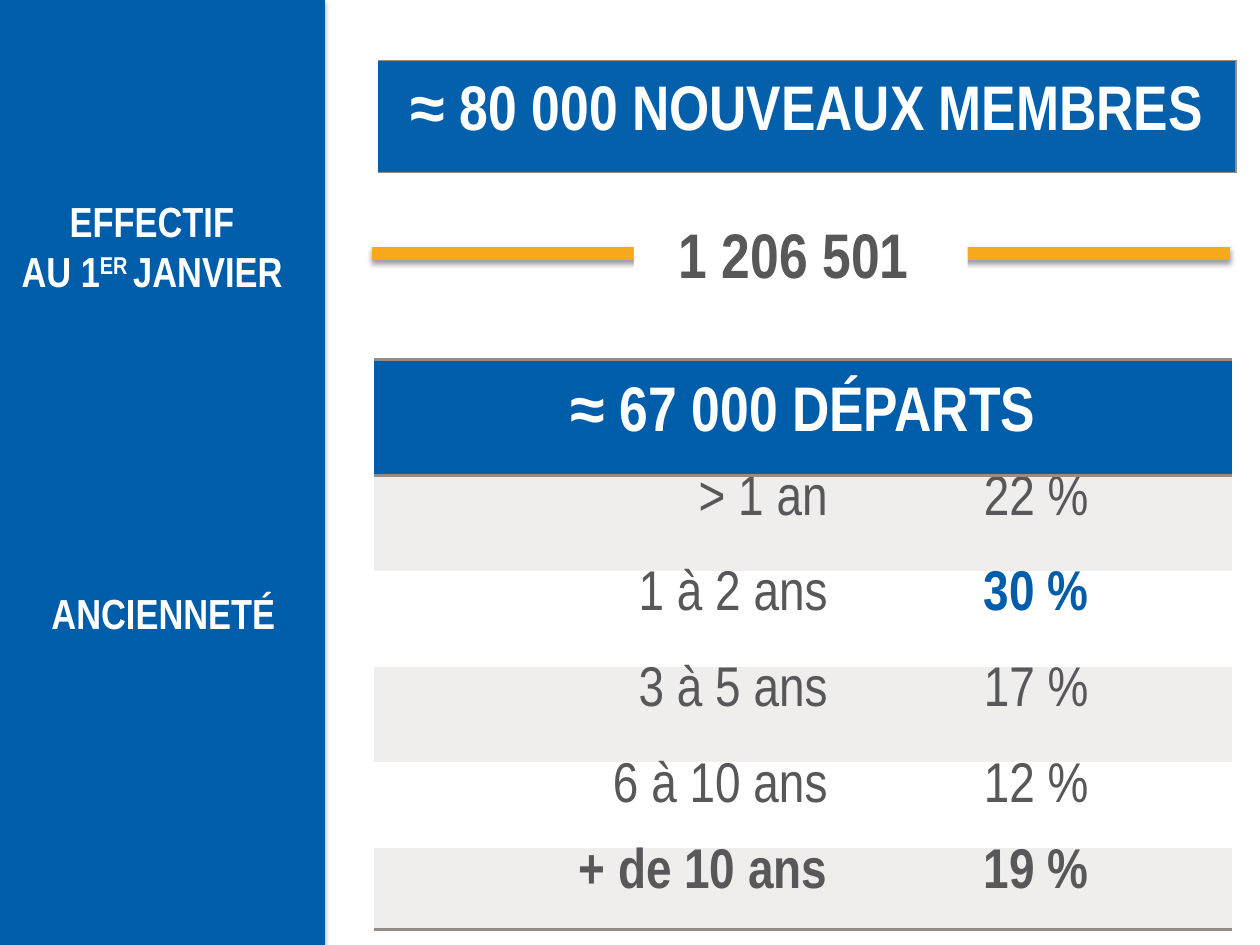
from pptx import Presentation
from pptx.dml.color import RGBColor
from pptx.enum.shapes import MSO_CONNECTOR as Link, MSO_SHAPE as Shape
from pptx.enum.text import MSO_ANCHOR as Anchor, PP_ALIGN as Align
from pptx.oxml import parse_xml
from pptx.oxml.ns import nsdecls
from pptx.util import Cm, Pt

BLUE = RGBColor(0x00, 0x5D, 0xAA)
GOLD = RGBColor(0xF7, 0xA8, 0x1B)
GREY = RGBColor(0x58, 0x58, 0x5A)
PALE = RGBColor(0xEF, 0xEE, 0xED)
RULE = RGBColor(0x95, 0x8D, 0x85)
WHITE = RGBColor(0xFF, 0xFF, 0xFF)
NS = nsdecls("a")
PLAIN = "{2D5ABB26-0587-4C30-8999-92F81FD0307C}"  # no style, no grid
SHADOW = (f'<a:effectLst {NS}><a:outerShdw blurRad="{Pt(3.1)}" dist="{Pt(1.6)}" '
          'dir="5400000" rotWithShape="0"><a:srgbClr val="000000">'
          '<a:alpha val="38000"/></a:srgbClr></a:outerShdw></a:effectLst>')


def write(frame, *lines, size=24, color=WHITE, bold=True, align=Align.CENTER, gap=None):
    """Fill a text frame; a line is a list of (text, raise in percent) or a string."""
    frame.word_wrap = True
    for i, line in enumerate(lines):
        para = frame.add_paragraph() if i else frame.paragraphs[0]
        para.alignment = align
        if gap:
            para.line_spacing = gap
        for text, lift in [(line, 0)] if isinstance(line, str) else line:
            run = para.add_run()
            run.text = text
            font = run.font
            font.name, font.size, font.bold = "Arial Narrow", Pt(size), bold
            font.color.rgb = color
            if lift:
                run._r.get_or_add_rPr().set("baseline", str(lift * 1000))


def paint(cell, color, edges="", width=1):
    """Set a cell's fill and the ruled edges, named in the order R, T, B."""
    props = cell._tc.get_or_add_tcPr()
    for edge in edges:
        props.append(parse_xml(
            f'<a:ln{edge} {NS} w="{Pt(width)}"><a:solidFill>'
            f'<a:srgbClr val="{RULE}"/></a:solidFill></a:ln{edge}>'))
    cell.fill.solid()
    cell.fill.fore_color.rgb = color


deck = Presentation()
deck.slide_width, deck.slide_height = Cm(25.4), Cm(19.05)
shapes = deck.slides.add_slide(deck.slide_layouts[6]).shapes

# Side panel
panel = shapes.add_shape(Shape.RECTANGLE, 0, 0, Cm(6.55), deck.slide_height)
panel.fill.solid()
panel.fill.fore_color.rgb = BLUE
panel.line.fill.background()
panel._element.spPr.append(parse_xml(SHADOW))

# Tables: left, top, column widths, row heights
grids = []
for left, top, cols, rows in [
    (7.62, 1.22, [17.3], [2.26]),
    (7.54, 7.24, [9.4, 7.9], [2.34, 1.93, 1.93, 1.93, 1.73, 1.63]),
]:
    frame = shapes.add_table(len(rows), len(cols), Cm(left), Cm(top),
                             Cm(sum(cols)), Cm(sum(rows)))
    grid = frame.table
    grid.first_row = grid.horz_banding = False
    grid._tbl.tblPr.find("{*}tableStyleId").text = PLAIN
    for col, width in zip(grid.columns, cols):
        col.width = Cm(width)
    for row, height in zip(grid.rows, rows):
        row.height = Cm(height)
    grids.append(grid)
joined, left_us = grids

left_us.cell(0, 0).merge(left_us.cell(0, 1))
paint(left_us.cell(0, 1), BLUE, "TB", 2)
for grid, text, edges, width in [
    (joined, "≈ 80 000 NOUVEAUX MEMBRES", "RTB", 1),
    (left_us, "≈ 67 000 DÉPARTS", "TB", 2),
]:
    head = grid.cell(0, 0)
    head.vertical_anchor = Anchor.MIDDLE
    paint(head, BLUE, edges, width)
    write(head.text_frame, text, size=36, gap=0.8)
tint = joined.cell(0, 0)._tc.tcPr.find("{*}solidFill")[0]
tint.append(parse_xml(f'<a:alpha {NS} val="98000"/>'))

# Departures by seniority: label, share, label bold, share bold, share colour
data = [
    ("> 1 an", "22 %", False, False, GREY),
    ("1 à 2 ans", "30 %", False, True, BLUE),
    ("3 à 5 ans", "17 %", False, False, GREY),
    ("6 à 10 ans", "12 %", False, False, GREY),
    ("+ de 10 ans", "19 %", True, True, GREY),
]
for i, (label, share, strong, heavy, color) in enumerate(data, 1):
    name, value = left_us.cell(i, 0), left_us.cell(i, 1)
    for cell in (name, value):
        paint(cell, PALE if i % 2 else WHITE, "B" if i == len(data) else "", 2)
    write(name.text_frame, label, size=32, color=GREY, bold=strong,
          align=Align.RIGHT, gap=0.8)
    write(value.text_frame, share, size=32, color=color, bold=heavy, gap=0.8)

# Headcount on its gold rule
rule = shapes.add_connector(Link.STRAIGHT, Cm(7.49), Cm(5.11), Cm(24.79), Cm(5.11))
rule.line.color.rgb = GOLD
rule.line.width = Pt(7.5)
rule._element.spPr.append(parse_xml(SHADOW))

count = shapes.add_shape(Shape.RECTANGLE, Cm(12.78), Cm(4.22), Cm(6.73), Cm(1.8))
count.shadow.inherit = False
count.fill.solid()
count.fill.fore_color.rgb = WHITE
count.line.fill.background()
count.text_frame.vertical_anchor = Anchor.TOP
write(count.text_frame, "1 206 501 ", size=36, color=GREY)

# Panel labels
for left, top, lines in [
    (-0.43, 3.81, ["EFFECTIF", [("AU 1", 0), ("ER ", 30), ("JANVIER", 0)]]),
    (-0.2, 11.71, ["ANCIENNETÉ"]),
]:
    box = shapes.add_textbox(Cm(left), Cm(top), Cm(6.99), Cm(2.54))
    write(box.text_frame, *lines)

deck.save("out.pptx")
